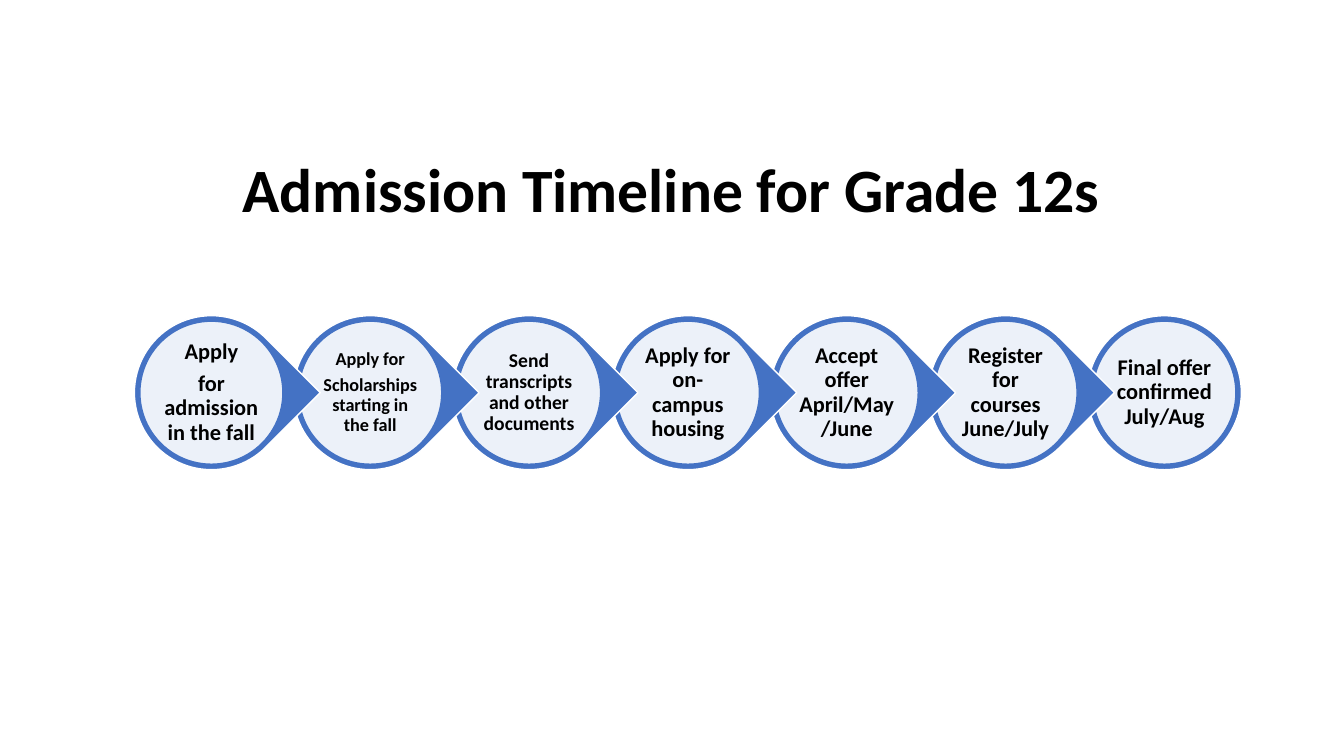
import pptx
import pptx.util
import pptx.dml.color
import pptx.enum.shapes
import pptx.enum.text
import pptx.oxml.ns
import lxml.etree

Pt = pptx.util.Pt
RGB = pptx.dml.color.RGBColor.from_string
KIND = pptx.enum.shapes.MSO_SHAPE


class Theme:
    font = "Calibri"
    ink = RGB("000000")
    blue = RGB("4472C4")
    white = RGB("FFFFFF")
    title = 44
    large = 16
    medium = 14
    small = 13


def write(box, text, size, gap=0):
    """Fill a text box with bold, centred paragraphs."""
    frame = box.text_frame
    frame.text = text
    frame.word_wrap = True
    frame.vertical_anchor = pptx.enum.text.MSO_ANCHOR.MIDDLE
    for par in frame.paragraphs:
        par.alignment = pptx.enum.text.PP_ALIGN.CENTER
        par.line_spacing = 0.9
        par.space_after = Pt(gap)
        for run in par.runs:
            run.font.name = Theme.font
            run.font.size = Pt(size)
            run.font.bold = True
            run.font.color.rgb = Theme.ink


def draw(group, kind, left, top, side, fill, line):
    shape = group.shapes.add_shape(kind, Pt(left), Pt(top), Pt(side), Pt(side))
    shape.shadow.inherit = False
    shape.fill.solid()
    shape.fill.fore_color.rgb = fill
    shape.line.color.rgb = line
    shape.line.width = Pt(1)
    return shape


deck = pptx.Presentation()
deck.slide_width = Pt(960)
deck.slide_height = Pt(540)
slide = deck.slides.add_slide(deck.slide_layouts[6])

title = slide.shapes.add_textbox(Pt(66), Pt(83.5), Pt(828), Pt(108.7))
write(title, "Admission Timeline for Grade 12s", Theme.title)

steps = [
    ("Apply\nfor admission\vin the fall", Theme.large),
    ("Apply for\nScholarships starting in the fall", Theme.small),
    ("Send transcripts and other documents", Theme.medium),
    ("Apply for on- campus housing", Theme.large),
    ("Accept offer April/May/June", Theme.large),
    ("Register for courses June/July", Theme.large),
    ("Final offer confirmed July/Aug", Theme.large),
]
start, pitch, middle = 151, 113.45, 280.5
drop, disc, label = 110, 102.2, 73.4
last = len(steps) - 1
chain = slide.shapes.add_group_shape()

# Each pointer overlaps the step to its right, so the last step goes at the back.
for i in range(last, -1, -1):
    text, size = steps[i]
    centre = start + i * pitch

    kind = KIND.OVAL if i == last else KIND.TEAR
    back = draw(chain, kind, centre - drop / 2, middle - drop / 2, drop,
                Theme.blue, Theme.white)
    if i < last:
        back.rotation = 45

    face = draw(chain, KIND.OVAL, centre - disc / 2, middle - disc / 2, disc,
                Theme.white, Theme.blue)
    tint = face.fill._xPr.find(".//" + pptx.oxml.ns.qn("a:srgbClr"))
    lxml.etree.SubElement(tint, pptx.oxml.ns.qn("a:alpha"), val="90000")

    box = chain.shapes.add_textbox(Pt(centre - label / 2), Pt(middle - label / 2),
                                   Pt(label), Pt(label))
    frame = box.text_frame
    frame.margin_left = frame.margin_right = Pt(1.5)
    frame.margin_top = frame.margin_bottom = Pt(1.5)
    write(box, text, size, 0.35 * size)

deck.save("out.pptx")
